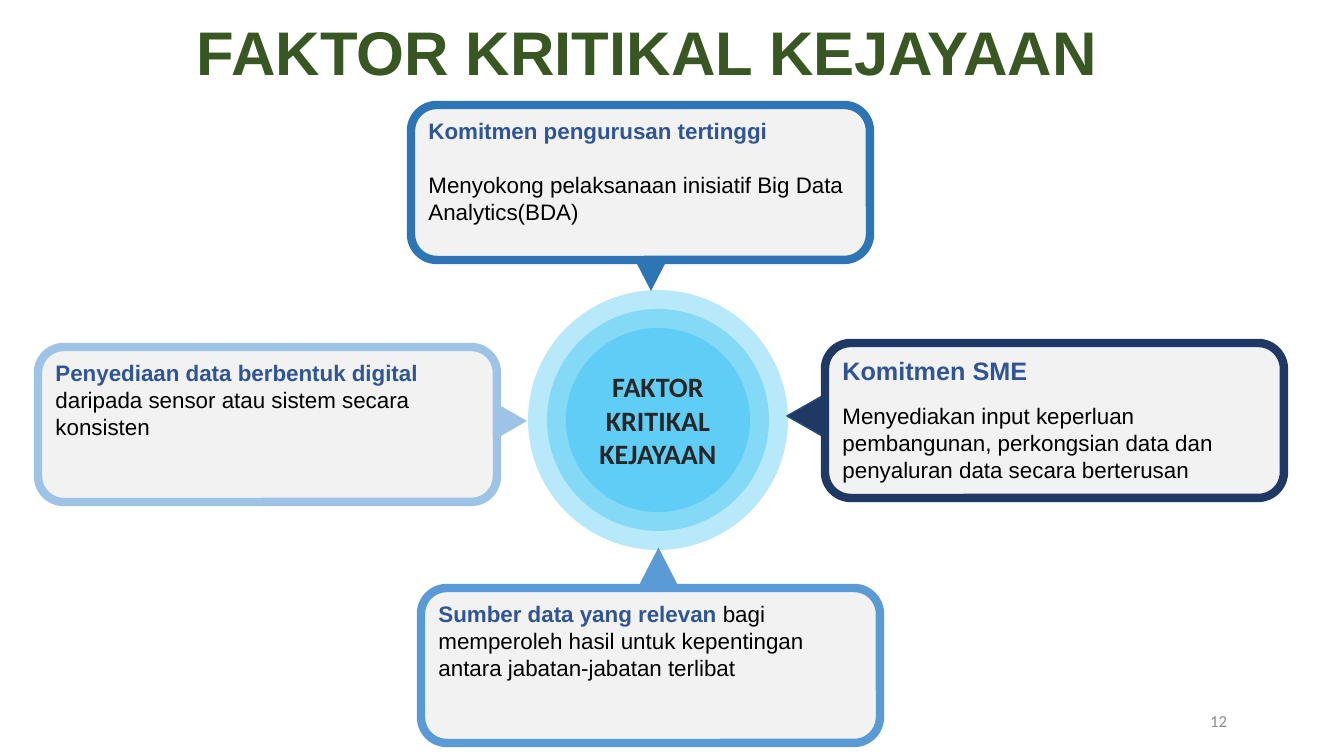
"""Build a slide with four critical success factors around a central circle."""
from lxml.etree import SubElement
from pptx import Presentation
from pptx.dml.color import RGBColor
from pptx.enum.shapes import MSO_SHAPE
from pptx.enum.text import MSO_ANCHOR, PP_ALIGN
from pptx.oxml.ns import qn
from pptx.util import Pt

PX = 914400 / 100.8
COLORS = {
    "title": "385723", "heading": "2F5597", "body": "000000", "panel": "F2F2F2",
    "circle": "00B0F0", "hub": "262626", "number": "8C8C8C",
    "left": "9DC3E6", "top": "2E75B6", "right": "203864", "bottom": "5B9BD5",
    "right_edge": "1F4E79",
}
FORMATS = {
    "title": {"name": "Arial", "size": Pt(44), "bold": True},
    "heading": {"name": "Arial", "size": Pt(16), "bold": True},
    "large heading": {"name": "Arial", "size": Pt(18), "bold": True},
    "body": {"name": "Arial", "size": Pt(16), "bold": False},
    "hub": {"name": "Calibri", "size": Pt(20), "bold": True},
    "number": {"name": "Calibri", "size": Pt(12), "bold": False},
}
TITLE = "FAKTOR KRITIKAL KEJAYAAN"
TITLE_AREA = (187, 8, 1000, 85)
NUMBER = "12"
NUMBER_AREA = (935, 701, 302, 40)
HUB_CENTER = (658, 420)
HUB_RADII = (130, 111, 92)
PANEL_SIZE = (459, 155)
ALPHA = 28000

POINTERS = [
    ("left", MSO_SHAPE.RIGHT_ARROW, (387, 383, 140, 76), 0, 0.87),
    ("top", MSO_SHAPE.RIGHT_ARROW, (593, 198, 116, 70), 90, 0.97),
    ("right", MSO_SHAPE.LEFT_ARROW, (787, 378, 140, 76), 0, 0.88),
    ("bottom", MSO_SHAPE.RIGHT_ARROW, (601, 570, 115, 70), 270, 0.97),
]
FACTORS = [
    ("top", (411, 105), 19, [
        [("Komitmen pengurusan tertinggi", "heading")],
        [("Menyokong pelaksanaan inisiatif Big Data Analytics(BDA)", "body")]]),
    ("right", (825, 343), 12, [
        [("Komitmen SME", "large heading")],
        [("Menyediakan input keperluan pembangunan, perkongsian data dan "
          "penyaluran data secara berterusan", "body")]]),
    ("bottom", (421, 588), 12, [
        [("Sumber data yang relevan ", "heading"),
         ("bagi memperoleh hasil untuk kepentingan antara jabatan-jabatan terlibat", "body")]]),
    ("left", (38, 347), 12, [
        [("Penyediaan data berbentuk digital ", "heading"),
         ("daripada sensor atau sistem secara konsisten", "body")]]),
]


def emu(lengths):
    return [round(length * PX) for length in lengths]


def color(key):
    return RGBColor.from_string(COLORS[key])


def write(holder, paragraphs, align=PP_ALIGN.LEFT, anchor=MSO_ANCHOR.TOP, gap=0):
    frame = holder.text_frame
    frame.word_wrap = True
    frame.vertical_anchor = anchor
    for index, pieces in enumerate(paragraphs):
        paragraph = frame.add_paragraph() if index else frame.paragraphs[0]
        paragraph.alignment = align
        paragraph.space_after = Pt(gap)
        for text, style in pieces:
            run = paragraph.add_run()
            run.text = text
            for attribute, value in FORMATS[style].items():
                setattr(run.font, attribute, value)
            run.font.color.rgb = color(style.split()[-1])
    return frame


def add_filled(slide, kind, area, fill, edge=None, width=1):
    shape = slide.shapes.add_shape(kind, *emu(area))
    shape.shadow.inherit = False
    shape.fill.solid()
    shape.fill.fore_color.rgb = color(fill)
    if edge:
        shape.line.color.rgb = color(edge)
        shape.line.width = Pt(width)
    else:
        shape.line.fill.background()
    return shape


def add_hub(slide):
    x, y = HUB_CENTER
    for radius in HUB_RADII:
        circle = add_filled(slide, MSO_SHAPE.OVAL,
                            (x - radius, y - radius, 2 * radius, 2 * radius), "circle")
        tint = circle.fill._xPr.find(".//" + qn("a:srgbClr"))
        SubElement(tint, qn("a:alpha"), val=str(ALPHA))
    frame = write(circle, [[(TITLE, "hub")]], PP_ALIGN.CENTER, MSO_ANCHOR.MIDDLE)
    frame.margin_left = frame.margin_right = 0


def main():
    deck = Presentation()
    deck.slide_width, deck.slide_height = emu((1344, 756))
    slide = deck.slides.add_slide(deck.slide_layouts[6])

    heading = slide.shapes.add_textbox(*emu(TITLE_AREA))
    write(heading, [[(TITLE, "title")]], anchor=MSO_ANCHOR.BOTTOM)
    add_hub(slide)
    for side, kind, area, rotation, head in POINTERS:
        edge = "right_edge" if side == "right" else None
        pointer = add_filled(slide, kind, area, side, edge)
        pointer.rotation = rotation
        pointer.adjustments[1] = head
    for side, corner, gap, paragraphs in FACTORS:
        panel = add_filled(slide, MSO_SHAPE.ROUNDED_RECTANGLE, corner + PANEL_SIZE,
                           "panel", side, 6)
        write(panel, paragraphs, gap=gap)
    page = slide.shapes.add_textbox(*emu(NUMBER_AREA))
    write(page, [[(NUMBER, "number")]], PP_ALIGN.RIGHT, MSO_ANCHOR.MIDDLE)
    deck.save("out.pptx")


if __name__ == "__main__":
    main()
